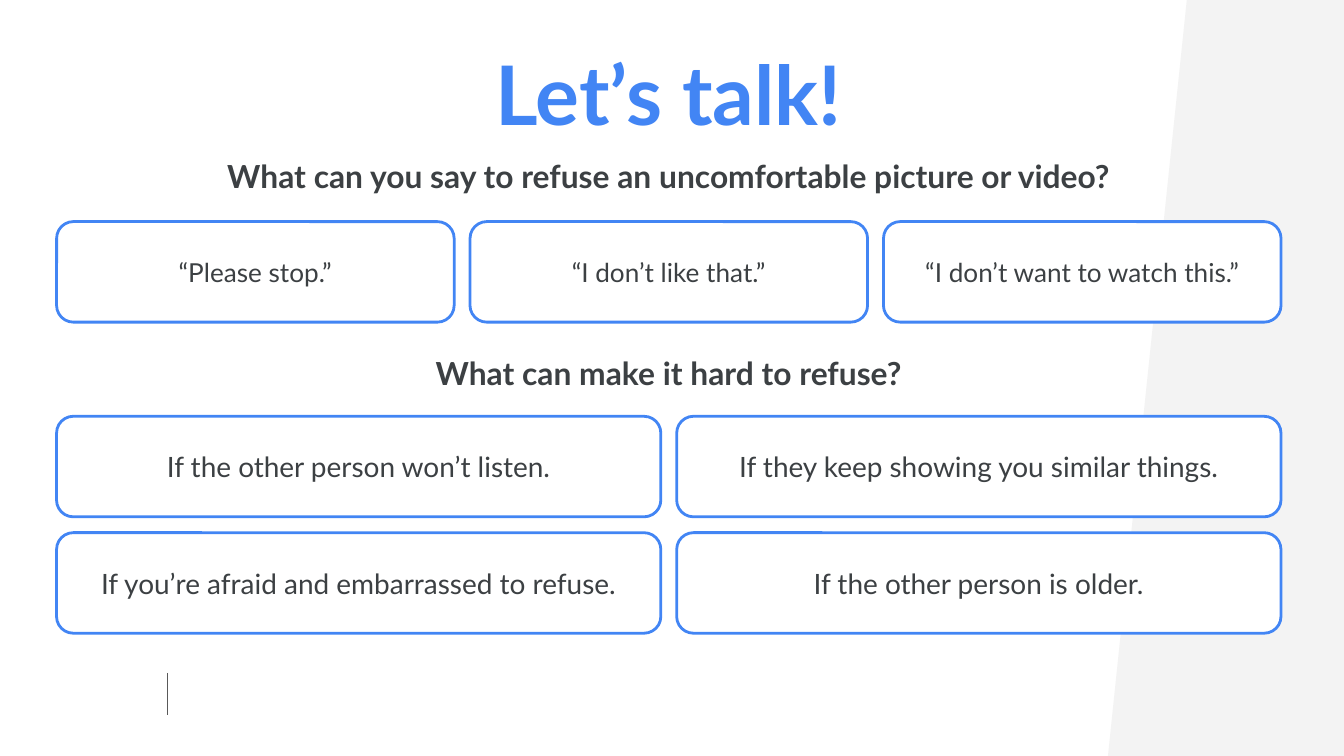
from dataclasses import dataclass

from lxml.etree import SubElement
from pptx import Presentation
from pptx.dml.color import RGBColor
from pptx.enum.shapes import MSO_CONNECTOR, MSO_SHAPE
from pptx.enum.text import MSO_ANCHOR, MSO_AUTO_SIZE, PP_ALIGN
from pptx.oxml.ns import qn
from pptx.util import Cm, Pt


@dataclass
class Theme:
    font: str = "Lato"
    blue: RGBColor = RGBColor(0x42, 0x85, 0xF4)
    ink: RGBColor = RGBColor(0x3C, 0x40, 0x43)
    white: RGBColor = RGBColor(0xFF, 0xFF, 0xFF)
    panel: RGBColor = RGBColor(0xF3, 0xF3, 0xF3)
    rule: RGBColor = RGBColor(0x59, 0x59, 0x59)
    title_size: int = 44
    question_size: int = 17
    phrase_size: int = 14
    reason_size: int = 15


theme = Theme()


def write(frame, text, size, color=theme.ink, bold=False, inset=0.0,
          anchor=MSO_ANCHOR.TOP, spacing=None, fit=MSO_AUTO_SIZE.NONE):
    frame.word_wrap = True
    frame.auto_size = fit
    frame.vertical_anchor = anchor
    frame.margin_left = frame.margin_right = Cm(inset)
    frame.margin_top = frame.margin_bottom = Cm(inset)
    frame.text = text
    paragraph = frame.paragraphs[0]
    paragraph.alignment = PP_ALIGN.CENTER
    paragraph.line_spacing = spacing
    paragraph.space_before = Pt(0)
    font = paragraph.runs[0].font
    font.name, font.size, font.bold = theme.font, Pt(size), bold
    font.color.rgb = color


presentation = Presentation()
presentation.slide_width, presentation.slide_height = Cm(25.4), Cm(14.29)
slide = presentation.slides.add_slide(presentation.slide_layouts[5])
slide.background.fill.solid()
slide.background.fill.fore_color.rgb = theme.white

# Content grid, in centimetres
left, width, gap = 1.07, 23.14, 0.3
card_height = 1.9

# Footer rule
footer_rule = slide.shapes.add_connector(
    MSO_CONNECTOR.STRAIGHT, Cm(3.17), Cm(12.72), Cm(3.17), Cm(13.51))
footer_rule.line.color.rgb = theme.rule
footer_rule.line.width = Pt(0.75)
SubElement(footer_rule._element.spPr, qn("a:effectLst"))

# Slanted side panel
outline = slide.shapes.build_freeform(Cm(25.4), Cm(14.29))
outline.add_line_segments(
    [(Cm(20.94), Cm(14.29)), (Cm(22.43), Cm(0)), (Cm(25.4), Cm(0))], close=True)
side_panel = outline.convert_to_shape()
side_panel.shadow.inherit = False
side_panel.fill.solid()
side_panel.fill.fore_color.rgb = theme.panel
side_panel.line.fill.background()

# Title
title = slide.shapes.title
title.left, title.top, title.width, title.height = Cm(left), Cm(1.04), Cm(width), Cm(1.9)
write(title.text_frame, "Let’s talk!", theme.title_size, theme.blue, bold=True, spacing=0.9)

# Each question with its grid of answers
sections = [
    ("What can you say to refuse an uncomfortable picture or video?",
     3.05, 4.19, 3, theme.phrase_size,
     ["“Please stop.”", "“I don’t like that.”", "“I don’t want to watch this.”"]),
    ("What can make it hard to refuse?",
     6.77, 7.87, 2, theme.reason_size,
     ["If the other person won’t listen.",
      "If they keep showing you similar things.",
      "If you’re afraid and embarrassed to refuse.",
      "If the other person is older."]),
]
for question, question_top, cards_top, columns, answer_size, answers in sections:
    heading = slide.shapes.add_textbox(Cm(left), Cm(question_top), Cm(width), Cm(0.66))
    write(heading.text_frame, question, theme.question_size, bold=True,
          spacing=0.9, fit=MSO_AUTO_SIZE.SHAPE_TO_FIT_TEXT)

    card_width = (width - gap * (columns - 1)) / columns
    for index, answer in enumerate(answers):
        row, column = divmod(index, columns)
        card = slide.shapes.add_shape(
            MSO_SHAPE.ROUNDED_RECTANGLE,
            Cm(left + column * (card_width + gap)),
            Cm(cards_top + row * (card_height + gap)),
            Cm(card_width), Cm(card_height))
        card.shadow.inherit = False
        card.fill.solid()
        card.fill.fore_color.rgb = theme.white
        card.line.color.rgb = theme.blue
        card.line.width = Pt(1.5)
        write(card.text_frame, answer, answer_size, inset=0.25, anchor=MSO_ANCHOR.MIDDLE)

presentation.save("out.pptx")
